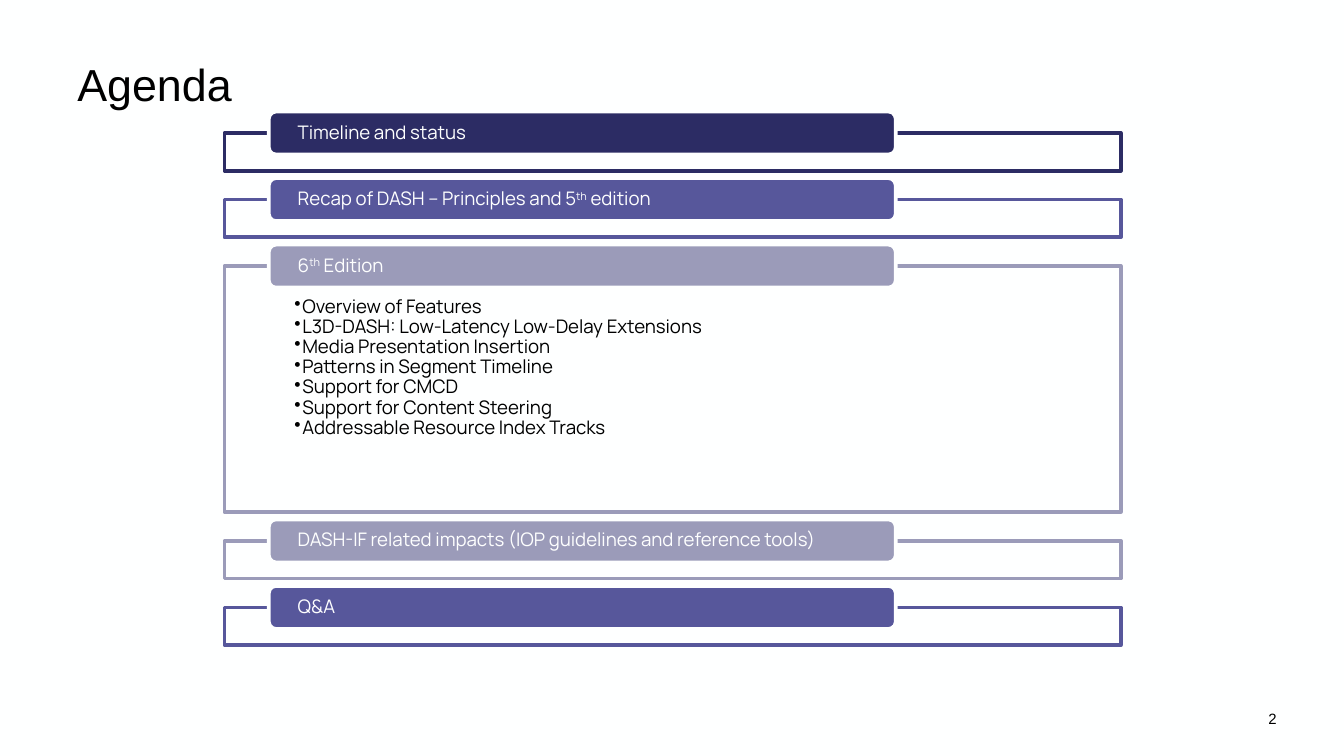
from lxml import etree
from pptx import Presentation
from pptx import util as u
from pptx.dml.color import RGBColor
from pptx.enum import shapes, text
from pptx.oxml import ns

PX = u.Inches(1) // 200
PAPER = RGBColor(0xFE, 0xFF, 0xFF)
INK = RGBColor(0, 0, 0)
NAVY = RGBColor(0x2C, 0x2C, 0x64)
VIOLET = RGBColor(0x57, 0x57, 0x9B)
LILAC = RGBColor(0x9B, 0x9B, 0xB9)

SLIM, TALL, GAP = 56, 366, 43
FEATURES = [
    "Overview of Features",
    "L3D-DASH: Low-Latency Low-Delay Extensions",
    "Media Presentation Insertion",
    "Patterns in Segment Timeline",
    "Support for CMCD",
    "Support for Content Steering",
    "Addressable Resource Index Tracks",
]
TOPICS = [
    (["Timeline and status"], NAVY, SLIM, []),
    (["Recap of DASH – Principles and 5", "th", " edition"], VIOLET, SLIM, []),
    (["6", "th", " Edition"], LILAC, TALL, FEATURES),
    (["DASH-IF related impacts (IOP guidelines and reference tools)"], LILAC, SLIM, []),
    (["Q&A"], VIOLET, SLIM, []),
]


def px(*lengths):
    """Turn px lengths into EMU."""
    return [length * PX for length in lengths]


def set_all(target, values):
    """Set each named attribute of the target."""
    for name, value in values.items():
        setattr(target, name, value)


def prepare_frame(frame, margins, anchor):
    """Give a text frame its insets, anchor and wrapping."""
    sides = ("margin_left", "margin_top", "margin_right", "margin_bottom")
    set_all(frame, dict(zip(sides, px(*margins))))
    set_all(frame, {"word_wrap": True, "vertical_anchor": anchor,
                    "auto_size": text.MSO_AUTO_SIZE.NONE})


def write(paragraph, parts, face, size, color, align=text.PP_ALIGN.LEFT, spacing=0.9):
    """Write the parts as runs, raising every second one."""
    set_all(paragraph, {"alignment": align, "line_spacing": spacing})
    for index, part in enumerate(parts):
        run = paragraph.add_run()
        run.text = part
        set_all(run.font, {"name": face, "size": u.Pt(size)})
        run.font.color.rgb = color
        if index % 2:
            run.font._element.set("baseline", "30000")


def add_bullet(paragraph):
    """Give a paragraph a hanging round bullet."""
    paragraph.level = 1
    properties = paragraph._p.get_or_add_pPr()
    indent = 12 * PX
    properties.set("marL", str(indent))
    properties.set("indent", str(-indent))
    etree.SubElement(properties, ns.qn("a:buChar")).set("char", "•")


def add_box(group, preset, box, fill, line):
    """Add a flat filled and outlined shape."""
    shape = group.shapes.add_shape(preset, *px(*box))
    shape.shadow.inherit = False
    shape.fill.solid()
    shape.fill.fore_color.rgb = fill
    shape.line.color.rgb = line
    shape.line.width = u.Pt(2)
    return shape


def add_topic(group, box, heading, color, points):
    """Build one agenda topic: a frame with a heading tab on its top edge."""
    left, top, width, height = box
    frame = add_box(group, shapes.MSO_SHAPE.RECTANGLE, box, PAPER, color)
    solid = frame.fill._xPr.find(ns.qn("a:solidFill"))
    etree.SubElement(solid[0], ns.qn("a:alpha")).set("val", "90000")
    if points:
        body = frame.text_frame
        prepare_frame(body, (104, 46, 104, 16), text.MSO_ANCHOR.TOP)
        for index, point in enumerate(points):
            paragraph = body.add_paragraph() if index else body.paragraphs[0]
            write(paragraph, [point], "Manrope", 10, INK)
            add_bullet(paragraph)
    tab = add_box(group, shapes.MSO_SHAPE.ROUNDED_RECTANGLE,
                  (left + 66, top - 32, width * 7 // 10, 64), color, PAPER)
    prepare_frame(tab.text_frame, (40, 0, 40, 0), text.MSO_ANCHOR.MIDDLE)
    write(tab.text_frame.paragraphs[0], heading, "Manrope", 10, PAPER)


def add_agenda(slide, left, top, width):
    """Stack the topics with equal gaps."""
    group = slide.shapes.add_group_shape()
    for heading, color, height, points in TOPICS:
        add_topic(group, (left, top, width, height), heading, color, points)
        top += height + GAP


def add_title(slide, box):
    """Place and fill the title placeholder."""
    title = slide.shapes.title
    set_all(title, dict(zip(("left", "top", "width", "height"), px(*box))))
    prepare_frame(title.text_frame, (15, 8, 15, 8), text.MSO_ANCHOR.MIDDLE)
    write(title.text_frame.paragraphs[0], ["Agenda"], "Arial", 24, INK)


def add_page_number(slide, box):
    """Write the page number at the right of its box."""
    number = slide.shapes.add_textbox(*px(*box)).text_frame
    prepare_frame(number, (0, 10, 0, 10), text.MSO_ANCHOR.MIDDLE)
    write(number.paragraphs[0], ["2"], "Arial", 8, INK, text.PP_ALIGN.RIGHT, 1.0)


def main():
    """Build and save the agenda slide."""
    deck = Presentation()
    set_all(deck, dict(zip(("slide_width", "slide_height"), px(2000, 1125))))
    slide = deck.slides.add_slide(deck.slide_layouts[5])
    slide.background.fill.solid()
    slide.background.fill.fore_color.rgb = PAPER
    add_page_number(slide, (1700, 1040, 200, 60))
    add_title(slide, (100, 40, 1800, 180))
    add_agenda(slide, 334, 198, 1334)
    deck.save("out.pptx")


if __name__ == "__main__":
    main()
